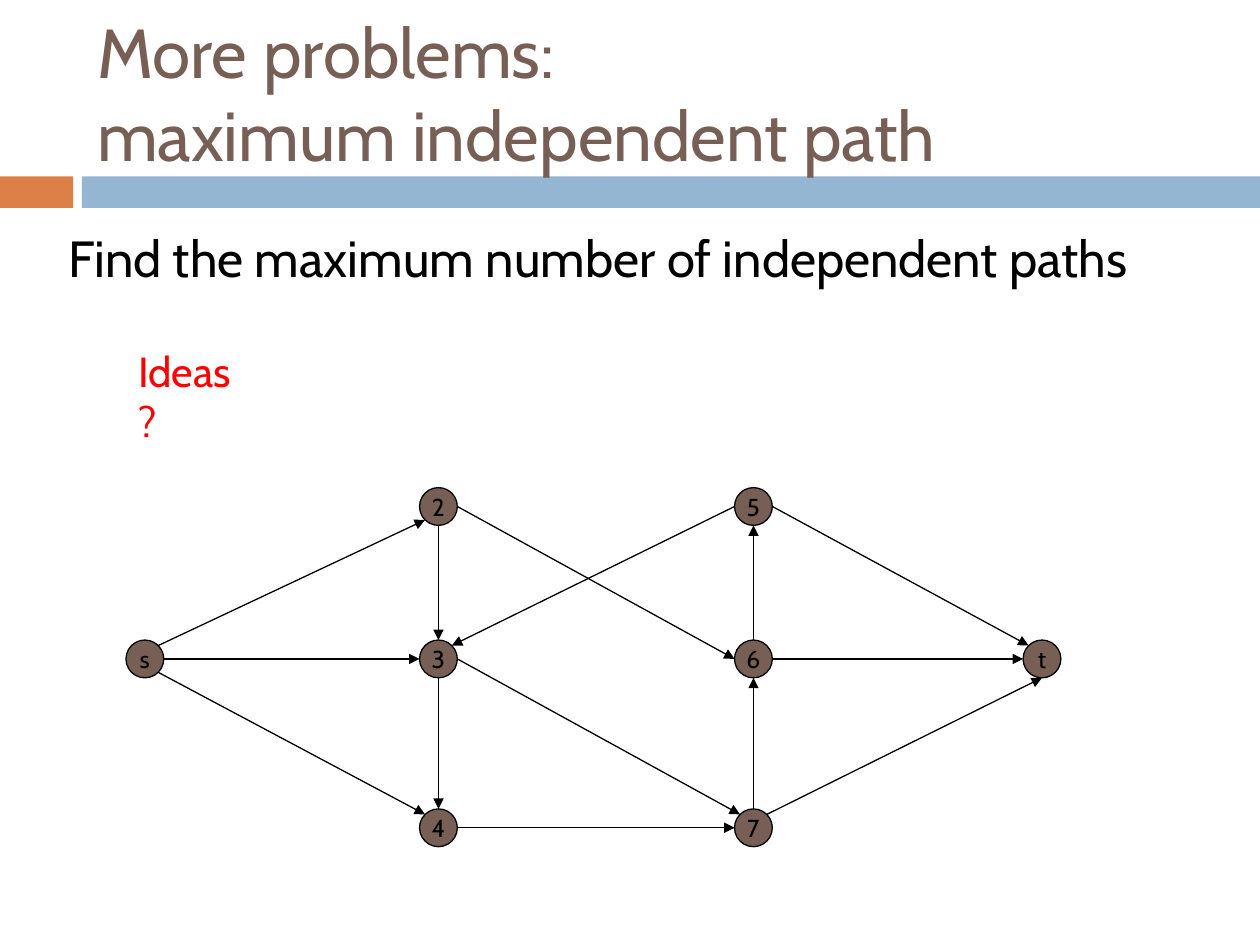
"""Build the maximum independent path slide; all lengths are percentages of the slide's width and height."""
from dataclasses import dataclass

from lxml import etree
from pptx import Presentation, util as u
from pptx.dml.color import RGBColor
from pptx.enum import shapes, text
from pptx.oxml.ns import qn
from pptx.slide import Slide

BLACK = RGBColor(0x00, 0x00, 0x00)
BROWN = RGBColor(0x77, 0x5F, 0x55)
ORANGE = RGBColor(0xDD, 0x80, 0x47)
BLUE = RGBColor(0x94, 0xB6, 0xD2)
RED = RGBColor(0xFF, 0x00, 0x00)

WIDTH, HEIGHT = u.Inches(10), u.Inches(7.5)
NODE_WIDTH, NODE_HEIGHT = 3, 4
COLUMNS = (11.5, 34.8, 59.8, 82.7)
ROWS = (53.6, 69.73, 87.6)
NODES = {
    "s": (0, 1), "2": (1, 0), "3": (1, 1), "4": (1, 2),
    "5": (2, 0), "6": (2, 1), "7": (2, 2), "t": (3, 1),
}
DIAGONAL = 0.71
SIDES = {
    "top": (0, -1), "bottom": (0, 1), "left": (-1, 0), "right": (1, 0),
    "top left": (-DIAGONAL, -DIAGONAL), "top right": (DIAGONAL, -DIAGONAL),
    "bottom left": (-DIAGONAL, DIAGONAL), "bottom right": (DIAGONAL, DIAGONAL),
}
EDGES = (
    ("s", "top right", "2", "bottom left"),
    ("s", "right", "3", "left"),
    ("s", "bottom right", "4", "top left"),
    ("2", "bottom", "3", "top"),
    ("2", "right", "6", "left"),
    ("3", "bottom", "4", "top"),
    ("3", "right", "7", "top left"),
    ("4", "right", "7", "left"),
    ("5", "left", "3", "top right"),
    ("5", "right", "t", "top left"),
    ("6", "top", "5", "bottom"),
    ("6", "right", "t", "left"),
    ("7", "top", "6", "bottom"),
    ("7", "top right", "t", "bottom"),
)


def across(share):
    return round(WIDTH * share / 100)


def down(share):
    return round(HEIGHT * share / 100)


def box(left, top, width, height):
    return across(left), down(top), across(width), down(height)


@dataclass
class GraphSlide:
    slide: Slide
    font: str = "Cabin"
    line_width: float = 0.75

    def set_words(self, shape, words, size, color, align=text.PP_ALIGN.LEFT):
        frame = shape.text_frame
        frame.text = words
        frame.word_wrap = True
        paragraph = frame.paragraphs[0]
        paragraph.alignment = align
        for run in paragraph.runs:
            run.font.name = self.font
            run.font.size = u.Pt(size)
            run.font.color.rgb = color
        return paragraph

    def placeholder(self, index, words, place, size, color, anchor):
        shape = self.slide.placeholders[index]
        shape.left, shape.top, shape.width, shape.height = box(*place)
        paragraph = self.set_words(shape, words, size, color)
        shape.text_frame.auto_size = text.MSO_AUTO_SIZE.NONE
        shape.text_frame.vertical_anchor = anchor
        return paragraph

    def title(self, words, place):
        self.placeholder(0, words, place, 39.6, BROWN, text.MSO_ANCHOR.MIDDLE)

    def body(self, words, place):
        paragraph = self.placeholder(1, words, place, 29, BLACK, text.MSO_ANCHOR.TOP)
        paragraph.space_before = u.Pt(7)
        properties = paragraph._p.get_or_add_pPr()
        properties.set("marL", "0")
        properties.set("indent", "0")
        etree.SubElement(properties, qn("a:buNone"))

    def shape(self, kind, place, color):
        shape = self.slide.shapes.add_shape(kind, *box(*place))
        shape.shadow.inherit = False
        shape.fill.solid()
        shape.fill.fore_color.rgb = color
        return shape

    def bar(self, place, color):
        bar = self.shape(shapes.MSO_SHAPE.RECTANGLE, place, color)
        bar.line.fill.background()
        self.slide.shapes._spTree.insert(2, bar._element)

    def note(self, words, place):
        self.set_words(self.slide.shapes.add_textbox(*box(*place)), words, 24, RED)

    def node(self, name):
        column, row = NODES[name]
        place = (COLUMNS[column] - NODE_WIDTH / 2, ROWS[row] - NODE_HEIGHT / 2,
                 NODE_WIDTH, NODE_HEIGHT)
        node = self.shape(shapes.MSO_SHAPE.OVAL, place, BROWN)
        node.line.color.rgb = BLACK
        node.line.width = u.Pt(self.line_width)
        self.set_words(node, name, 14, BLACK, text.PP_ALIGN.CENTER)
        node.text_frame.word_wrap = False
        node.text_frame.vertical_anchor = text.MSO_ANCHOR.MIDDLE

    def rim(self, name, side):
        column, row = NODES[name]
        x, y = SIDES[side]
        return (across(COLUMNS[column] + x * NODE_WIDTH / 2),
                down(ROWS[row] + y * NODE_HEIGHT / 2))

    def edge(self, start, start_side, end, end_side):
        edge = self.slide.shapes.add_connector(
            shapes.MSO_CONNECTOR.STRAIGHT,
            *self.rim(start, start_side), *self.rim(end, end_side))
        edge.line.color.rgb = BLACK
        edge.line.width = u.Pt(self.line_width)
        etree.SubElement(edge.line._get_or_add_ln(), qn("a:tailEnd"), type="triangle")
        etree.SubElement(edge._element.spPr, qn("a:effectLst"))


def main():
    presentation = Presentation()
    presentation.slide_width, presentation.slide_height = WIDTH, HEIGHT
    page = GraphSlide(presentation.slides.add_slide(presentation.slide_layouts[1]))
    page.bar((0, 18.67, 5.8, 3.33), ORANGE)
    page.bar((6.5, 18.67, 93.5, 3.33), BLUE)
    page.title("More problems:\vmaximum independent path", (6.7, 2.53, 89.2, 14.4))
    page.body("Find the maximum number of independent paths", (4.4, 23.33, 91.5, 65.6))
    page.note("Ideas?", (10, 35.87, 10.6, 6.67))
    for name in NODES:
        page.node(name)
    for edge in EDGES:
        page.edge(*edge)
    presentation.save("out.pptx")


if __name__ == "__main__":
    main()
